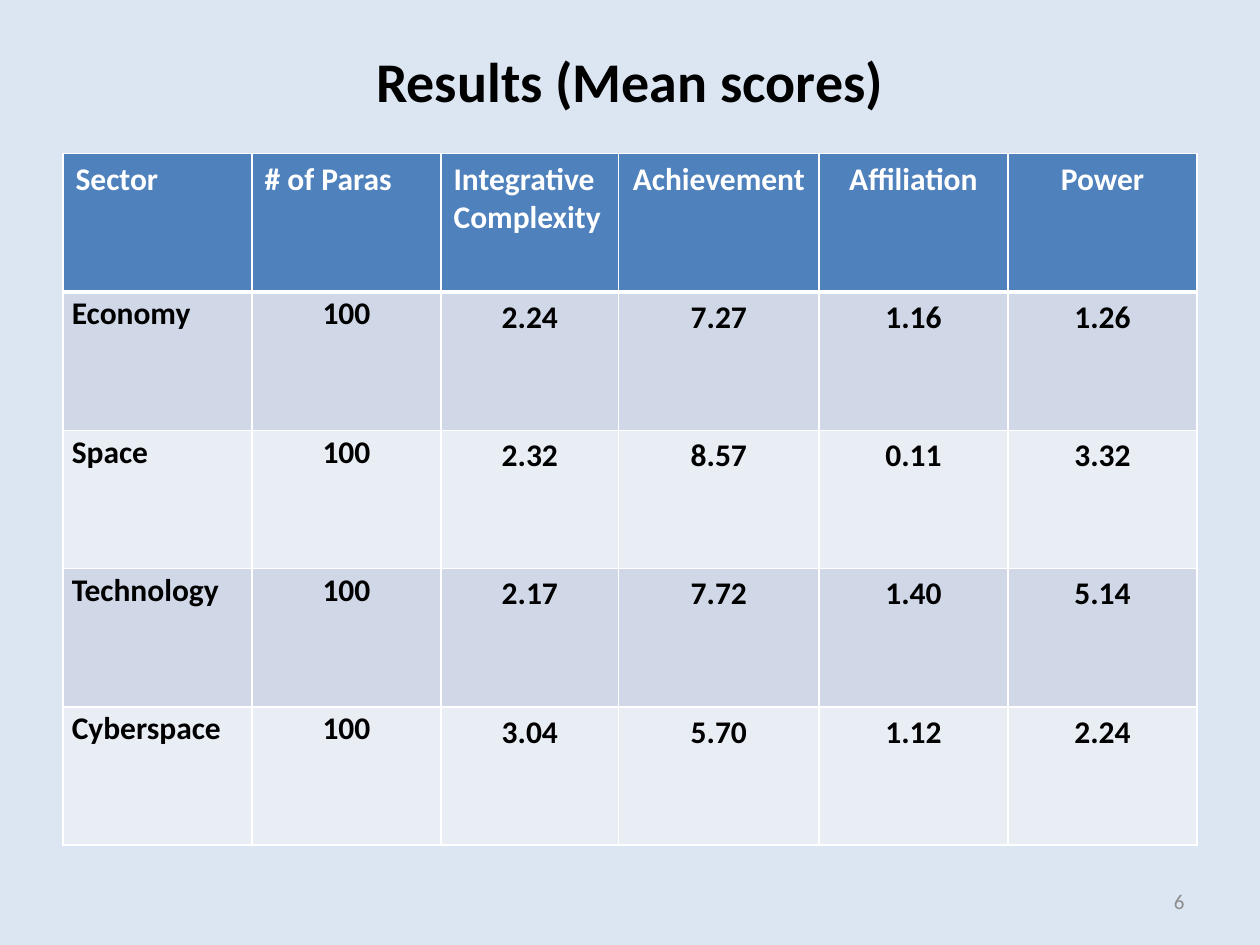
"""Build the slide of mean scores by sector."""
import lxml.etree
import pptx
import pptx.dml.color
import pptx.enum.text
import pptx.oxml.ns
import pptx.util

COLOURS = {"page": "DCE6F2", "header": "4F81BD", "odd": "D0D8E8",
           "even": "E9EDF4", "white": "FFFFFF", "black": "000000", "grey": "8C8C8C"}
ALIGN = pptx.enum.text.PP_ALIGN
MIDDLE = pptx.enum.text.MSO_ANCHOR.MIDDLE
ROWS = [
    ["Sector", "# of Paras", "Integrative\nComplexity", "Achievement", "Affiliation", "Power"],
    ["Economy", "100", "2.24", "7.27", "1.16", "1.26"],
    ["Space", "100", "2.32", "8.57", "0.11", "3.32"],
    ["Technology", "100", "2.17", "7.72", "1.40", "5.14"],
    ["Cyberspace", "100", "3.04", "5.70", "1.12", "2.24"],
]
COLUMN_WIDTHS = [1.5, 1.5, 1.41, 1.59, 1.5, 1.5]


def write(frame, text, size=18, colour="black", bold=True, align=ALIGN.CENTER,
          line_spacing=None, space_before=None):
    frame.text = text
    for para in frame.paragraphs:
        para.alignment = align
        para.line_spacing = line_spacing
        para.space_before = space_before
        for span in para.runs:
            span.font.name = "Calibri"
            span.font.size = pptx.util.Pt(size)
            span.font.bold = bold
            span.font.color.rgb = pptx.dml.color.RGBColor.from_string(COLOURS[colour])


def draw_borders(cell, **widths):
    properties = cell._tc.get_or_add_tcPr()
    for position, (side, width) in enumerate(widths.items()):
        line = lxml.etree.Element(pptx.oxml.ns.qn(f"a:ln{side}"), w=str(pptx.util.Pt(width)))
        fill = lxml.etree.SubElement(line, pptx.oxml.ns.qn("a:solidFill"))
        lxml.etree.SubElement(fill, pptx.oxml.ns.qn("a:srgbClr"), val=COLOURS["white"])
        properties.insert(position, line)


deck = pptx.Presentation()
deck.slide_width = pptx.util.Inches(10)
deck.slide_height = pptx.util.Inches(7.5)
margin = int(deck.slide_width * 0.05)
content_width = deck.slide_width - 2 * margin

page = deck.slides.add_slide(deck.slide_layouts[5])
page.background.fill.solid()
page.background.fill.fore_color.rgb = pptx.dml.color.RGBColor.from_string(COLOURS["page"])

title = page.shapes.title
title.left, title.top = margin, pptx.util.Inches(0.31)
title.width, title.height = content_width, pptx.util.Inches(0.66)
title.text_frame.vertical_anchor = MIDDLE
write(title.text_frame, "Results (Mean scores)", size=32)

table = page.shapes.add_table(
    len(ROWS), len(COLUMN_WIDTHS), margin, pptx.util.Inches(1.22),
    content_width, pptx.util.Inches(5.49)).table
for column, width in zip(table.columns, COLUMN_WIDTHS):
    column.width = pptx.util.Inches(width)

for row, texts in enumerate(ROWS):
    is_header = row == 0
    band = "header" if is_header else "odd" if row % 2 else "even"
    for column, text in enumerate(texts):
        cell = table.cell(row, column)
        cell.fill.solid()
        cell.fill.fore_color.rgb = pptx.dml.color.RGBColor.from_string(COLOURS[band])
        draw_borders(cell, L=1, R=1, T=3 if row == 1 else 1, B=3 if is_header else 1)
        is_label = not is_header and column < 2
        if is_label:
            cell.margin_left = cell.margin_right = pptx.util.Inches(0.07)
            cell.margin_top = cell.margin_bottom = 0
        is_left = column < 3 if is_header else column == 0
        write(cell.text_frame, text,
              colour="white" if is_header else "black",
              align=ALIGN.LEFT if is_left else ALIGN.CENTER,
              line_spacing=1.07 if is_label else None,
              space_before=pptx.util.Pt(23) if is_label else None)

number_width = pptx.util.Inches(2.33)
number_box = page.shapes.add_textbox(
    deck.slide_width - margin - number_width, pptx.util.Inches(6.95),
    number_width, pptx.util.Inches(0.4))
number_box.text_frame.word_wrap = True
number_box.text_frame.vertical_anchor = MIDDLE
write(number_box.text_frame, "6", size=12, colour="grey", bold=False, align=ALIGN.RIGHT)

deck.save("out.pptx")
